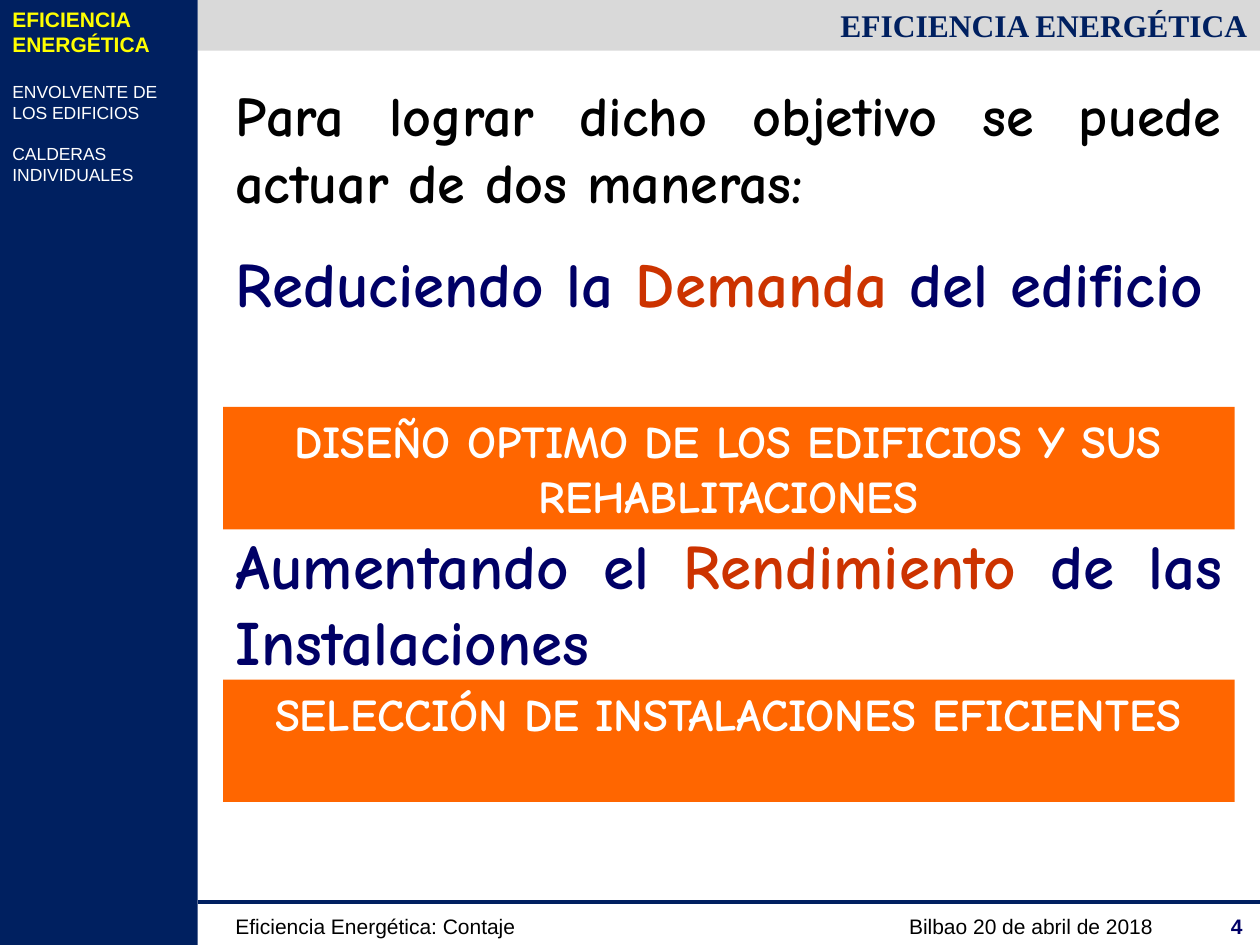
"""Builds the slide on the two ways to improve energy efficiency in buildings."""
from dataclasses import dataclass

from lxml.etree import SubElement
from pptx import Presentation
from pptx.dml.color import RGBColor
from pptx.enum.shapes import MSO_CONNECTOR, MSO_SHAPE
from pptx.enum.text import MSO_ANCHOR, MSO_AUTO_SIZE, PP_ALIGN
from pptx.oxml.ns import qn
from pptx.util import Pt


@dataclass(frozen=True)
class Theme:
    navy: str = "002060"
    ink: str = "000066"
    black: str = "000000"
    white: str = "FFFFFF"
    grey: str = "D9D9D9"
    orange: str = "FF6600"
    red: str = "CC3300"
    yellow: str = "FFFF00"
    body_font: str = "Comic Neue"
    title_font: str = "Times New Roman"
    plain_font: str = "Arial"
    intro_size: int = 32
    action_size: int = 36
    banner_size: int = 26
    title_size: int = 18
    footer_size: int = 12
    menu_size: int = 10


THEME = Theme()
SLIDE_WIDTH, SLIDE_HEIGHT = 720, 540
SIDEBAR_WIDTH, HEADER_HEIGHT = 113, 29
BODY_LEFT, BODY_WIDTH = 127.5, 578
FOOTER_LINE_TOP, FOOTER_TOP, FOOTER_HEIGHT = 515.5, 518.4, 21.6

TITLE = "EFICIENCIA ENERGÉTICA"
MENU = [
    ("EFICIENCIA ENERGÉTICA", THEME.yellow, THEME.footer_size, True, 0),
    ("ENVOLVENTE DE LOS EDIFICIOS", THEME.white, THEME.menu_size, False, 13.8),
    ("CALDERAS INDIVIDUALES", THEME.white, THEME.menu_size, False, 11.5),
]
STATEMENTS = [
    (42.5, 85, THEME.intro_size,
     [("Para lograr dicho objetivo se puede actuar de dos maneras:", THEME.black)]),
    (136, 94.5, THEME.action_size,
     [("Reduciendo la ", THEME.ink), ("Demanda", THEME.red), (" del edificio", THEME.ink)]),
    (297.5, 94.5, THEME.action_size,
     [("Aumentando el ", THEME.ink), ("Rendimiento", THEME.red),
      (" de las Instalaciones", THEME.ink)]),
]
BANNERS = [
    (232.5, "DISEÑO OPTIMO DE LOS EDIFICIOS Y SUS REHABLITACIONES"),
    (388.3, "SELECCIÓN DE INSTALACIONES EFICIENTES"),
]
BANNER_HEIGHT = 70
FOOTERS = [
    (127.5, 297, "Eficiencia Energética: Contaje", PP_ALIGN.LEFT, THEME.black, False),
    (433.5, 232.5, "Bilbao 20 de abril de 2018", PP_ALIGN.RIGHT, THEME.black, False),
    (674.6, 42.5, "4", PP_ALIGN.RIGHT, THEME.ink, True),
]


def write(paragraph, text, *, font, size, color, bold=False, align=PP_ALIGN.LEFT, before=0):
    paragraph.alignment = align
    paragraph.space_before = Pt(before)
    run = paragraph.add_run()
    run.text = text
    run.font.name = font
    run.font.size = Pt(size)
    run.font.bold = bold
    run.font.color.rgb = RGBColor.from_string(color)


def prepare_frame(shape, anchor=MSO_ANCHOR.TOP):
    frame = shape.text_frame
    frame.word_wrap = True
    frame.auto_size = MSO_AUTO_SIZE.NONE
    frame.vertical_anchor = anchor
    return frame


def add_text_box(slide, left, top, width, height):
    return prepare_frame(slide.shapes.add_textbox(Pt(left), Pt(top), Pt(width), Pt(height)))


def fill_with(shape, color):
    shape.fill.solid()
    shape.fill.fore_color.rgb = RGBColor.from_string(color)


def add_block(slide, left, top, width, height, color):
    shape = slide.shapes.add_shape(
        MSO_SHAPE.RECTANGLE, Pt(left), Pt(top), Pt(width), Pt(height))
    shape.shadow.inherit = False
    fill_with(shape, color)
    shape.line.fill.background()
    return shape


def add_title(slide):
    title = slide.shapes.title
    title.left, title.top = Pt(SIDEBAR_WIDTH), Pt(0)
    title.width, title.height = Pt(SLIDE_WIDTH - SIDEBAR_WIDTH), Pt(HEADER_HEIGHT)
    fill_with(title, THEME.grey)
    frame = prepare_frame(title, MSO_ANCHOR.MIDDLE)
    write(frame.paragraphs[0], TITLE, font=THEME.title_font, size=THEME.title_size,
          color=THEME.navy, bold=True, align=PP_ALIGN.RIGHT)


def add_sidebar(slide):
    add_block(slide, 0, 0, SIDEBAR_WIDTH, SLIDE_HEIGHT, THEME.navy)
    frame = add_text_box(slide, 0, 0, SIDEBAR_WIDTH, 499)
    for index, (text, color, size, bold, before) in enumerate(MENU):
        paragraph = frame.add_paragraph() if index else frame.paragraphs[0]
        write(paragraph, text, font=THEME.plain_font, size=size, color=color,
              bold=bold, before=before)


def add_body(slide):
    for top, height, size, parts in STATEMENTS:
        frame = add_text_box(slide, BODY_LEFT, top, BODY_WIDTH, height)
        for text, color in parts:
            write(frame.paragraphs[0], text, font=THEME.body_font, size=size,
                  color=color, bold=True, align=PP_ALIGN.JUSTIFY)
    for top, text in BANNERS:
        banner = add_block(slide, BODY_LEFT, top, BODY_WIDTH, BANNER_HEIGHT, THEME.orange)
        write(prepare_frame(banner).paragraphs[0], text, font=THEME.body_font,
              size=THEME.banner_size, color=THEME.white, bold=True, align=PP_ALIGN.CENTER)


def add_footer(slide):
    line = slide.shapes.add_connector(
        MSO_CONNECTOR.STRAIGHT, Pt(SIDEBAR_WIDTH), Pt(FOOTER_LINE_TOP),
        Pt(SLIDE_WIDTH), Pt(FOOTER_LINE_TOP))
    line.line.color.rgb = RGBColor.from_string(THEME.navy)
    line.line.width = Pt(2)
    SubElement(line._element.spPr, qn("a:effectLst"))
    for left, width, text, align, color, bold in FOOTERS:
        frame = add_text_box(slide, left, FOOTER_TOP, width, FOOTER_HEIGHT)
        write(frame.paragraphs[0], text, font=THEME.plain_font, size=THEME.footer_size,
              color=color, bold=bold, align=align)


def main():
    presentation = Presentation()
    presentation.slide_width, presentation.slide_height = Pt(SLIDE_WIDTH), Pt(SLIDE_HEIGHT)
    slide = presentation.slides.add_slide(presentation.slide_layouts[5])
    add_title(slide)
    add_sidebar(slide)
    add_body(slide)
    add_footer(slide)
    presentation.save("out.pptx")


if __name__ == "__main__":
    main()
